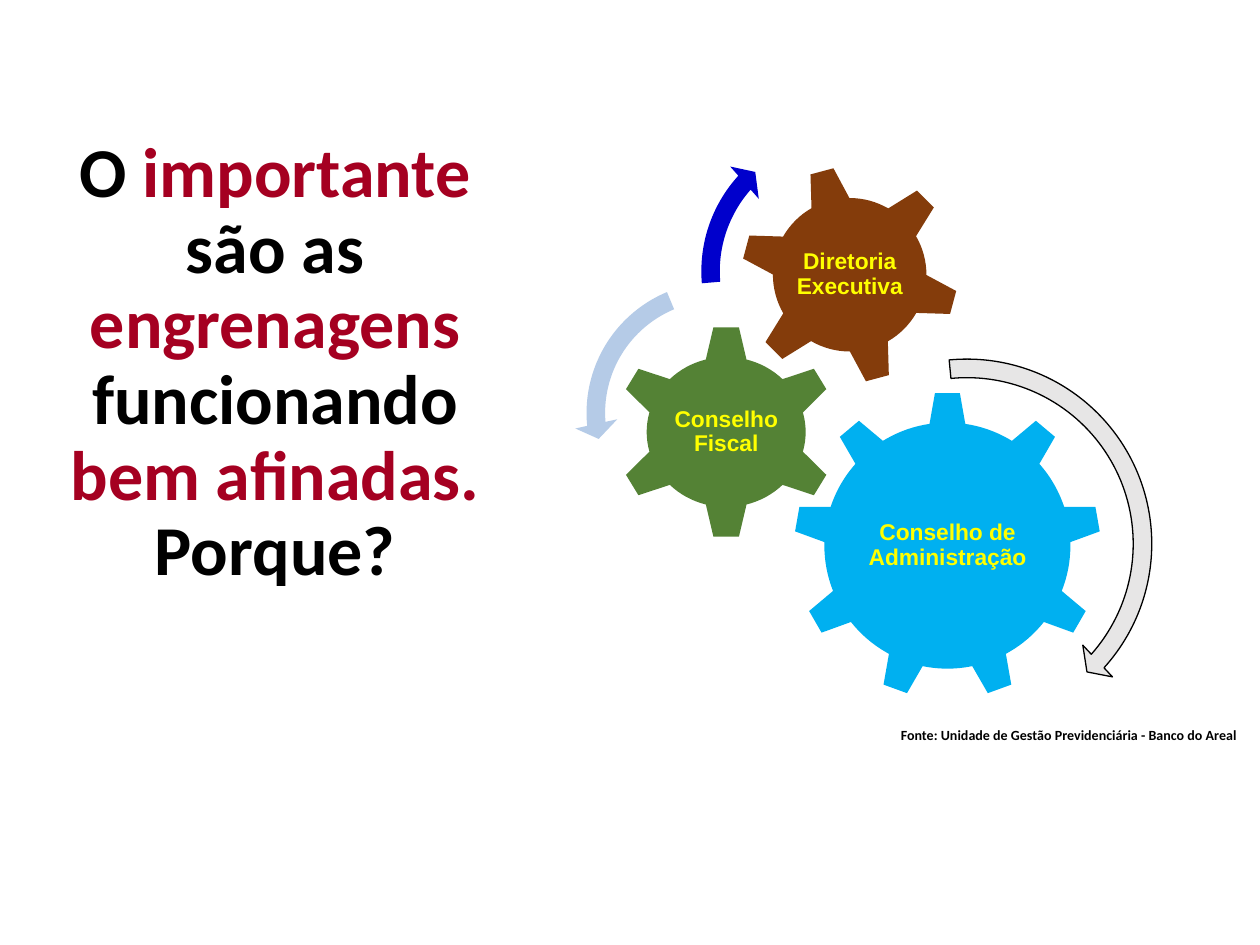
from pptx import Presentation
from pptx.dml.color import RGBColor
from pptx.enum.shapes import MSO_SHAPE
from pptx.enum.text import MSO_ANCHOR, MSO_AUTO_SIZE, PP_ALIGN
from pptx.util import Cm, Pt

GEAR_6, GEAR_9 = MSO_SHAPE.GEAR_6, MSO_SHAPE.GEAR_9
CLOCKWISE, COUNTERCLOCKWISE = MSO_SHAPE.CIRCULAR_ARROW, MSO_SHAPE.LEFT_CIRCULAR_ARROW
CENTER, LEFT = PP_ALIGN.CENTER, PP_ALIGN.LEFT
TOP, MIDDLE = MSO_ANCHOR.TOP, MSO_ANCHOR.MIDDLE
TITLE_ONLY = 5

THEME = {
    "text": "000000", "accent": "A50021", "label": "FFFF00",
    "blue": "00B0F0", "green": "548235", "brown": "843C0B",
    "gray": "E7E6E6", "pale": "B5CBE7", "navy": "0000CC", "outline": "000000",
    "title_size": 40, "label_size": 13, "source_size": 8,
    "body_font": "Calibri", "label_font": "Arial",
}

TITLE = [
    ("O ", "text"), ("importante ", "accent"), ("são as ", "text"),
    ("engrenagens ", "accent"), ("funcionando ", "text"),
    ("bem afinadas. ", "accent"), ("Porque?", "text"),
]
TITLE_BOX = (0.81, 2.64, 9.47, 3.2)
SOURCE = [("Fonte: Unidade de Gestão Previdenciária - Banco do Areal", "text")]
SOURCE_BOX = (17.91, 14.53, 7.44, 0.61)

GEARS = [
    {"label": "Conselho de Administração", "kind": GEAR_9, "fill": "blue",
     "center": (19.1, 11.0), "size": (6.2, 6.2), "label_size": (3.71, 3.2), "rotation": 0},
    {"label": "Conselho Fiscal", "kind": GEAR_6, "fill": "green",
     "center": (14.64, 8.71), "size": (4.5, 4.32), "label_size": (2.26, 2.13), "rotation": 0},
    {"label": "Diretoria Executiva", "kind": GEAR_6, "fill": "brown",
     "center": (17.13, 5.54), "size": (4.42, 4.42), "label_size": (2.49, 2.49), "rotation": 345},
]
ARROWS = [
    {"kind": CLOCKWISE, "box": (15.52, 6.99, 7.95, 7.95), "fill": "gray", "line": "outline",
     "adjustments": (0.047, 2.99, 25.131, 158.679, 0.055)},
    {"kind": COUNTERCLOCKWISE, "box": (11.58, 5.44, 5.77, 5.77), "fill": "pale", "line": None,
     "adjustments": (0.065, 4.3, 104.891, 148.378, 0.075)},
    {"kind": CLOCKWISE, "box": (13.89, 2.36, 6.22, 6.22), "fill": "navy", "line": None,
     "adjustments": (0.06, 3.941, 133.138, 105.082, 0.07)},
]


def color(name):
    return RGBColor.from_string(THEME[name])


def lengths(box):
    return [Cm(value) for value in box]


def centered_box(center, size):
    return tuple(c - s / 2 for c, s in zip(center, size)) + size


def write_text(shape, runs, size, font, align=LEFT, anchor=TOP, spacing=None, inset=None,
               auto_size=MSO_AUTO_SIZE.NONE):
    frame = shape.text_frame
    frame.word_wrap = True
    frame.auto_size = auto_size
    frame.vertical_anchor = anchor
    if inset is not None:
        frame.margin_left = frame.margin_right = Cm(inset)
        frame.margin_top = frame.margin_bottom = Cm(inset)
    paragraph = frame.paragraphs[0]
    paragraph.alignment = align
    paragraph.space_before = Pt(0)
    paragraph.line_spacing = spacing
    for text, color_name in runs:
        run = paragraph.add_run()
        run.text = text
        run.font.size = Pt(THEME[size])
        run.font.name = THEME[font]
        run.font.bold = True
        run.font.color.rgb = color(color_name)


def add_figure(shapes, kind, box, fill, line=None):
    shape = shapes.add_shape(kind, *lengths(box))
    shape.shadow.inherit = False
    shape.fill.solid()
    shape.fill.fore_color.rgb = color(fill)
    if line:
        shape.line.color.rgb = color(line)
        shape.line.width = Pt(0.75)
    else:
        shape.line.fill.background()
    return shape


def add_gear(shapes, gear):
    shape = add_figure(shapes, gear["kind"], centered_box(gear["center"], gear["size"]), gear["fill"])
    shape.rotation = gear["rotation"]
    label = shapes.add_textbox(*lengths(centered_box(gear["center"], gear["label_size"])))
    write_text(label, [(gear["label"], "label")], "label_size", "label_font",
               align=CENTER, anchor=MIDDLE, spacing=0.9, inset=0.05)


def add_arrow(shapes, arrow):
    shape = add_figure(shapes, arrow["kind"], arrow["box"], arrow["fill"], arrow["line"])
    for index, value in enumerate(arrow["adjustments"]):
        shape.adjustments[index] = value


def main():
    presentation = Presentation()
    presentation.slide_width, presentation.slide_height = Cm(25.4), Cm(19.05)
    slide = presentation.slides.add_slide(presentation.slide_layouts[TITLE_ONLY])

    title = slide.shapes.title
    title.left, title.top, title.width, title.height = lengths(TITLE_BOX)
    write_text(title, TITLE, "title_size", "body_font", align=CENTER, spacing=0.9)

    diagram = slide.shapes.add_group_shape()
    for gear in GEARS:
        add_gear(diagram.shapes, gear)
    for arrow in ARROWS:
        add_arrow(diagram.shapes, arrow)

    source = slide.shapes.add_textbox(*lengths(SOURCE_BOX))
    write_text(source, SOURCE, "source_size", "body_font", auto_size=MSO_AUTO_SIZE.SHAPE_TO_FIT_TEXT)

    presentation.save("out.pptx")


if __name__ == "__main__":
    main()
